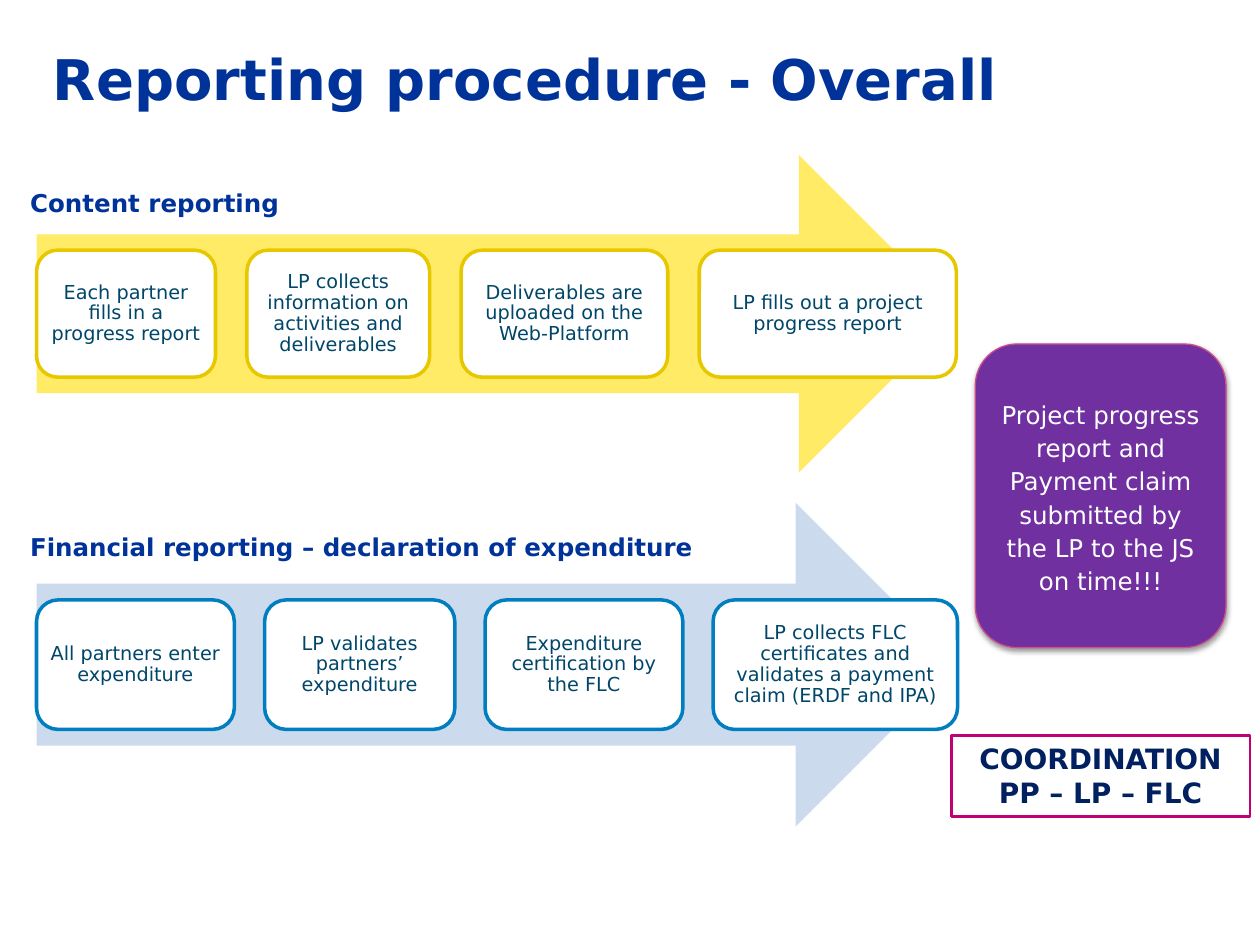
import pptx
import pptx.util
import pptx.dml.color
import pptx.enum.shapes
import pptx.enum.text
import pptx.oxml
import pptx.oxml.ns

Inches, Pt = pptx.util.Inches, pptx.util.Pt
Shape = pptx.enum.shapes.MSO_SHAPE
Align = pptx.enum.text.PP_ALIGN
Anchor = pptx.enum.text.MSO_ANCHOR

FONT = "DejaVu Sans"
HEADING = "003399"
TITLE = "Reporting procedure - Overall"
SUBMISSION = ("Project progress report and Payment claim submitted by "
              "the LP to the JS on time!!!")
COORDINATION = "COORDINATION PP – LP – FLC"

PROCESSES = [
    {"heading": "Content reporting", "heading_top": 1.44,
     "top": 1.23, "height": 2.52, "gap": 0.25, "arrow": "FFEB66", "border": "E7C800",
     "steps": [("Each partner fills in a progress report", 1.42),
               ("LP collects information on activities and deliverables", 1.45),
               ("Deliverables are uploaded on the Web-Platform", 1.64),
               ("LP fills out a project progress report", 2.04)]},
    {"heading": "Financial reporting – declaration of expenditure", "heading_top": 4.17,
     "top": 3.99, "height": 2.57, "gap": 0.24, "arrow": "CCDAEE", "border": "007EBF",
     "steps": [("All partners enter expenditure", 1.57),
               ("LP validates partners’ expenditure", 1.51),
               ("Expenditure certification by the FLC", 1.57),
               ("LP collects FLC certificates and validates a payment claim (ERDF and IPA)",
                1.94)]},
]
ARROW_LEFT, ARROW_WIDTH = 0.29, 7.31
CARD_SHARE = 0.4


def color(value):
    return pptx.dml.color.RGBColor.from_string(value)


def write(box, text, size, ink, bold=False, align=Align.LEFT, anchor=Anchor.TOP,
          spacing=None, inset=None):
    frame = box.text_frame
    frame.word_wrap = True
    frame.auto_size = pptx.enum.text.MSO_AUTO_SIZE.NONE
    frame.vertical_anchor = anchor
    across, down = (0.1, 0.05) if inset is None else (inset, inset)
    frame.margin_left = frame.margin_right = Inches(across)
    frame.margin_top = frame.margin_bottom = Inches(down)
    para = frame.paragraphs[0]
    para.alignment = align
    if spacing is not None:
        para.line_spacing = spacing
    span = para.add_run()
    span.text = text
    span.font.name = FONT
    span.font.size = Pt(size)
    span.font.bold = bold
    span.font.color.rgb = color(ink)


def add_shape(page, kind, area, fill=None, border=None, weight=1):
    shape = page.shapes.add_shape(kind, *map(Inches, area))
    shape.shadow.inherit = False
    if fill:
        shape.fill.solid()
        shape.fill.fore_color.rgb = color(fill)
    else:
        shape.fill.background()
    if border:
        shape.line.color.rgb = color(border)
        shape.line.width = Pt(weight)
    else:
        shape.line.fill.background()
    return shape


def add_shadow(shape):
    effects = shape._element.spPr.find(pptx.oxml.ns.qn("a:effectLst"))
    effects.append(pptx.oxml.parse_xml(
        f'<a:outerShdw {pptx.oxml.ns.nsdecls("a")} blurRad="{Pt(3.1)}" dist="{Pt(1.6)}" '
        'dir="5400000" rotWithShape="0"><a:srgbClr val="000000">'
        '<a:alpha val="38000"/></a:srgbClr></a:outerShdw>'))


def add_process(page, process):
    top, height = process["top"], process["height"]
    add_shape(page, Shape.RIGHT_ARROW, (ARROW_LEFT, top, ARROW_WIDTH, height),
              fill=process["arrow"])
    card_height = height * CARD_SHARE
    card_top = top + (height - card_height) / 2
    left = ARROW_LEFT
    for text, width in process["steps"]:
        card = add_shape(page, Shape.ROUNDED_RECTANGLE, (left, card_top, width, card_height),
                         fill="FFFFFF", border=process["border"], weight=2)
        write(card, text, 11, "004669", align=Align.CENTER, anchor=Anchor.MIDDLE,
              spacing=0.9, inset=0.05)
        left += width + process["gap"]
    heading = page.shapes.add_textbox(
        *map(Inches, (0.14, process["heading_top"], 8.58, 0.34)))
    write(heading, process["heading"], 14, HEADING, bold=True)


def main():
    deck = pptx.Presentation()
    deck.slide_width, deck.slide_height = Inches(10), Inches(7.5)
    page = deck.slides.add_slide(deck.slide_layouts[5])

    title = page.shapes.title
    title.left, title.top, title.width, title.height = map(Inches, (0.32, 0.3, 7.91, 0.64))
    write(title, TITLE, 32, HEADING, bold=True)

    for process in PROCESSES:
        add_process(page, process)

    submission = add_shape(page, Shape.ROUNDED_RECTANGLE, (7.74, 2.73, 1.99, 2.41),
                           fill="7030A0", border="CB4F88", weight=0.75)
    add_shadow(submission)
    write(submission, SUBMISSION, 14, "FFFFFF", align=Align.CENTER,
          anchor=Anchor.MIDDLE, spacing=Pt(19))

    coordination = add_shape(page, Shape.RECTANGLE, (7.55, 5.84, 2.37, 0.64),
                             border="C10076", weight=1.5)
    write(coordination, COORDINATION, 16, "002060", bold=True, align=Align.CENTER)

    deck.save("out.pptx")


if __name__ == "__main__":
    main()
